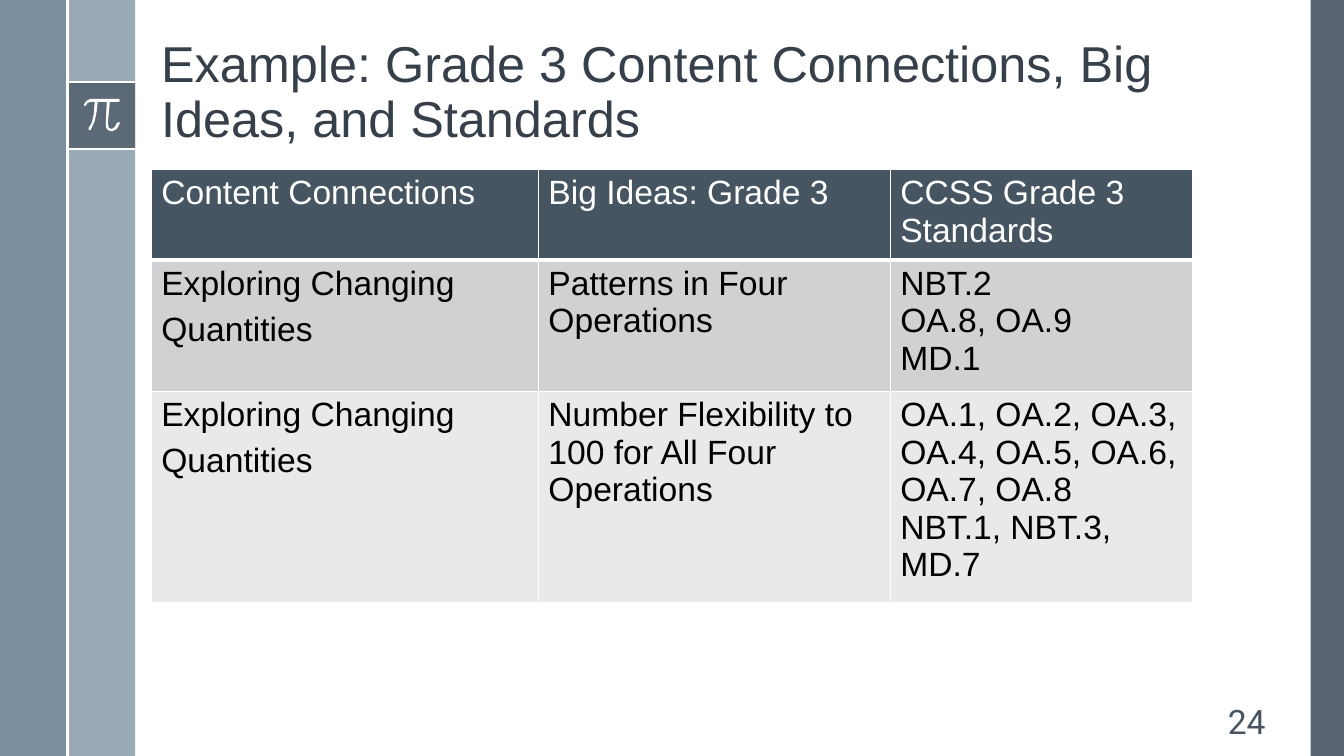
import pptx
import pptx.util
import pptx.oxml
import pptx.oxml.ns
import pptx.dml.color
import pptx.enum.shapes
import pptx.enum.text
from lxml import etree

Inches, Pt = pptx.util.Inches, pptx.util.Pt
Anchor, Align = pptx.enum.text.MSO_ANCHOR, pptx.enum.text.PP_ALIGN

TITLE = "Example: Grade 3 Content Connections, Big Ideas, and Standards"
PAGE = "24"
HEADINGS = ["Content Connections", "Big Ideas: Grade 3", "CCSS Grade 3 Standards"]
CONNECTION = ["Exploring Changing\u00a0", "Quantities"]
# Each cell is a list of paragraphs.
ROWS = [
    [[heading] for heading in HEADINGS],
    [CONNECTION, ["Patterns in Four Operations"], ["NBT.2 \nOA.8, OA.9", "MD.1"]],
    [CONNECTION, ["Number Flexibility to 100 for All Four Operations"],
     ["OA.1, OA.2, OA.3, OA.4, OA.5, OA.6, OA.7, OA.8", "NBT.1, NBT.3,", "MD.7"]],
]
COLUMN_WIDTHS = [3.84, 3.49, 3.0]
ROW_HEIGHTS = [0.83, 1.22, 1.95]

THEME = {
    "font": "Arial", "page_font": "Roboto", "title_size": 36, "body_size": 24,
    "title": "35404A", "header": "465562", "text": "000000", "white": "FFFFFF",
    "rows": ["465562", "CFD1D3", "E9E9EA"],
    "dark": "475562", "pale": "9BAAB7", "blue": "6A8093",
}

SLIDE_W, SLIDE_H = 13.33, 7.5
BAND = 0.67
BADGE_TOP = 0.81
# left, top, width, height, colour, opacity in percent
PANELS = [
    (SLIDE_W - 0.33, 0, 0.33, SLIDE_H, "dark", 90),
    (BAND, 0, BAND, SLIDE_H, "pale", 100),
    (0, 0, BAND, SLIDE_H, "blue", 88),
    (BAND, BADGE_TOP, BAND, BAND, "dark", 75),
]
RULES = [
    (BAND, BADGE_TOP, 2 * BAND, BADGE_TOP),
    (BAND, BADGE_TOP + BAND, 2 * BAND, BADGE_TOP + BAND),
    (BAND, 0, BAND, SLIDE_H),
]
# Outline of the pi sign, in hundredths of an inch
PI_OUTLINE = [
    (118, 98), (90, 98), (86, 100), (83, 104), (84, 105), (85, 105), (87, 102),
    (90, 101), (94, 101), (93, 114), (91, 222 - 100), (88, 127), (88, 129), (90, 129),
    (94, 120), (96, 110), (97, 101), (106, 101), (105, 122), (105, 126), (107, 129),
    (110, 130), (112, 130), (116, 128), (119, 122), (118, 121), (116, 122),
    (114, 126), (111, 128), (108, 127), (107, 122), (109, 101), (118, 101), (119, 100),
]


def color(name):
    return pptx.dml.color.RGBColor.from_string(THEME.get(name, name))


def paint(shape, fill, opacity=100):
    shape.shadow.inherit = False
    shape.fill.solid()
    shape.fill.fore_color.rgb = color(fill)
    shape.line.fill.background()
    if opacity < 100:
        srgb = shape._element.spPr.find(".//" + pptx.oxml.ns.qn("a:srgbClr"))
        etree.SubElement(srgb, pptx.oxml.ns.qn("a:alpha"), val=str(opacity * 1000))


def write(frame, paragraphs, size, ink, font):
    frame.text = ""
    for index, text in enumerate(paragraphs):
        paragraph = frame.paragraphs[0] if index == 0 else frame.add_paragraph()
        paragraph.text = text
        for run in paragraph.runs:
            run.font.size, run.font.name = Pt(size), font
            run.font.bold = False
            run.font.color.rgb = color(ink)


def add_text(slide, box, text, size, ink, font, anchor):
    frame = slide.shapes.add_textbox(*map(Inches, box)).text_frame
    frame.word_wrap = True
    frame.vertical_anchor = anchor
    write(frame, [text], size, ink, font)
    return frame.paragraphs[0]


def add_border(cell, side, points):
    line = pptx.oxml.parse_xml(
        f'<a:ln{side} {pptx.oxml.ns.nsdecls("a")} w="{Pt(points)}"><a:solidFill>'
        f'<a:srgbClr val="{THEME["white"]}"/></a:solidFill></a:ln{side}>')
    cell._tc.get_or_add_tcPr().append(line)


def add_decoration(slide):
    for *box, fill, opacity in PANELS:
        panel = slide.shapes.add_shape(
            pptx.enum.shapes.MSO_SHAPE.RECTANGLE, *map(Inches, box))
        paint(panel, fill, opacity)
    for ends in RULES:
        rule = slide.shapes.add_connector(
            pptx.enum.shapes.MSO_CONNECTOR.STRAIGHT, *map(Inches, ends))
        rule.line.color.rgb = color("white")
        rule.line.width = Pt(1.5)
        etree.SubElement(rule._element.spPr, pptx.oxml.ns.qn("a:effectLst"))
    outline = slide.shapes.build_freeform(*PI_OUTLINE[0], scale=Inches(0.01))
    outline.add_line_segments(PI_OUTLINE[1:], close=True)
    paint(outline.convert_to_shape(), "white")


def add_standards_table(slide):
    table = slide.shapes.add_table(
        len(ROWS), len(HEADINGS), Inches(1.5), Inches(1.68),
        Inches(sum(COLUMN_WIDTHS)), Inches(sum(ROW_HEIGHTS))).table
    table.first_row = table.horz_banding = False
    for column, width in zip(table.columns, COLUMN_WIDTHS):
        column.width = Inches(width)
    for r, (row, height) in enumerate(zip(ROWS, ROW_HEIGHTS)):
        table.rows[r].height = Inches(height)
        for c, paragraphs in enumerate(row):
            cell = table.cell(r, c)
            write(cell.text_frame, paragraphs, THEME["body_size"],
                  "white" if r == 0 else "text", THEME["font"])
            if paragraphs is CONNECTION:
                for paragraph in cell.text_frame.paragraphs:
                    paragraph.space_before = Pt(6)
            for side in "LRTB":
                under_header = (r, side) in ((0, "B"), (1, "T"))
                add_border(cell, side, 3 if under_header else 1)
            cell.fill.solid()
            cell.fill.fore_color.rgb = color(THEME["rows"][r])


def main():
    deck = pptx.Presentation()
    deck.slide_width, deck.slide_height = Inches(SLIDE_W), Inches(SLIDE_H)
    slide = deck.slides.add_slide(deck.slide_layouts[6])
    add_decoration(slide)
    title = add_text(slide, (1.5, 0.16, 10.94, 1.36), TITLE, THEME["title_size"],
                     "title", THEME["font"], Anchor.BOTTOM)
    title.line_spacing = 0.9
    add_standards_table(slide)
    page = add_text(slide, (11.77, 6.95, 0.88, 0.4), PAGE, THEME["body_size"],
                    "header", THEME["page_font"], Anchor.MIDDLE)
    page.alignment = Align.RIGHT
    deck.save("out.pptx")


if __name__ == "__main__":
    main()
